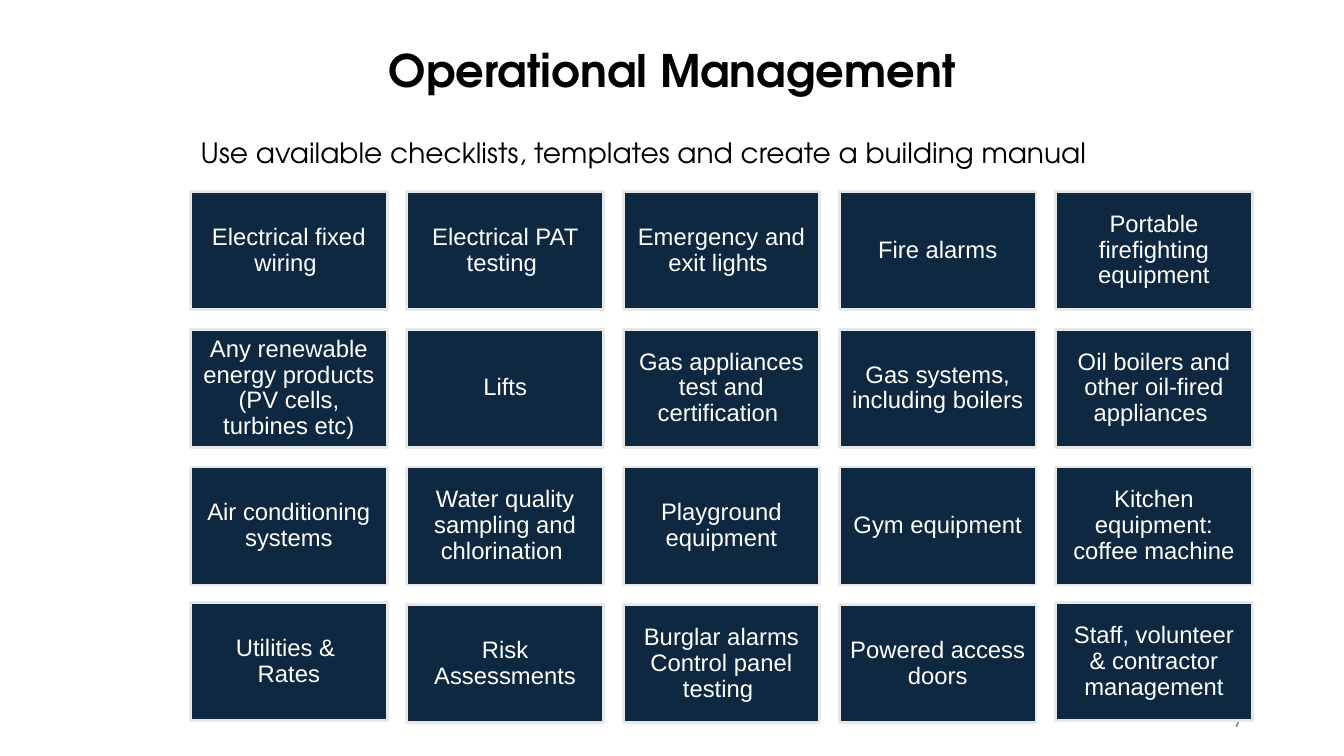
from pptx import Presentation
from pptx.dml.color import RGBColor
from pptx.enum.shapes import MSO_SHAPE
from pptx.enum.text import MSO_ANCHOR, MSO_AUTO_SIZE, PP_ALIGN
from pptx.oxml.ns import qn
from pptx.util import Inches, Pt

RECT = MSO_SHAPE.RECTANGLE
TOP, MIDDLE = MSO_ANCHOR.TOP, MSO_ANCHOR.MIDDLE
LEFT, CENTER, RIGHT = PP_ALIGN.LEFT, PP_ALIGN.CENTER, PP_ALIGN.RIGHT
GROW = MSO_AUTO_SIZE.SHAPE_TO_FIT_TEXT

COLORS = {"tile": "0E2841", "edge": "E8E8E8", "light": "FFFFFF",
          "dark": "000000", "grey": "797979"}
HEAD, BODY, NOTE = "TeX Gyre Adventor", "Arial", "Cabin"

# Trailing spaces count in the centring of a tile's last line
CHECKS = [
    ["Electrical fixed wiring ", "Electrical PAT testing ",
     "Emergency and exit lights ", "Fire alarms",
     "Portable firefighting equipment"],
    ["Any renewable energy products (PV cells, turbines etc)", "Lifts",
     "Gas appliances test and certification ",
     "Gas systems, including boilers",
     "Oil boilers and other oil-fired appliances "],
    ["Air conditioning systems", "Water quality sampling and chlorination ",
     "Playground equipment", "Gym equipment",
     "Kitchen equipment: coffee machine"],
    ["Utilities & \nRates", "Risk Assessments",
     "Burglar alarms Control panel testing ", "Powered access doors",
     "Staff, volunteer & contractor management"],
]


def color(name):
    return RGBColor.from_string(COLORS[name])


def place(shape, box):
    shape.left, shape.top, shape.width, shape.height = map(Inches, box)


def write(shape, text, font, size, tint, align, anchor, pad, bold=False,
          space=1.0, after=0):
    frame = shape.text_frame
    frame.text = text
    frame.word_wrap = True
    frame.vertical_anchor = anchor
    frame.margin_left = frame.margin_right = Inches(pad[0])
    frame.margin_top = frame.margin_bottom = Inches(pad[1])
    for para in frame.paragraphs:
        para.alignment = align
        para.line_spacing = space
        para.space_before, para.space_after = Pt(0), Pt(after)
        for run in para.runs:
            run.font.name, run.font.size = font, Pt(size)
            run.font.bold = bold
            run.font.color.rgb = color(tint)


def add_title(slide, box):
    title = slide.shapes.title
    place(title, box)
    write(title, "Operational Management", HEAD, 32, "dark", CENTER, TOP,
          (0, 0), bold=True, after=12)
    title.text_frame.auto_size = GROW


def add_lead(slide, box):
    lead = slide.placeholders[1]
    place(lead, box)
    write(lead, "Use available checklists, templates and create a building manual",
          HEAD, 20, "dark", LEFT, TOP, (0.1, 0.05))
    lead.text_frame.auto_size = GROW
    # No bullet and no indent
    props = lead.text_frame.paragraphs[0]._p.get_or_add_pPr()
    props.set("marL", "0")
    props.set("indent", "0")
    props.append(props.makeelement(qn("a:buNone"), {}))


def add_number(slide, box):
    number = slide.shapes.add_textbox(*map(Inches, box))
    write(number, "7", NOTE, 12, "grey", RIGHT, MIDDLE, (0.1, 0.05))


def add_tile(slide, box, text):
    tile = slide.shapes.add_shape(RECT, *map(Inches, box))
    tile.shadow.inherit = False
    tile.fill.solid()
    tile.fill.fore_color.rgb = color("tile")
    tile.line.color.rgb = color("edge")
    tile.line.width = Pt(2)
    write(tile, text, BODY, 17, "light", CENTER, MIDDLE, (0.07, 0.07),
          space=0.9)


def add_grid(slide, box, rows, wide=1.95, high=1.17):
    left, top, width, height = box
    last_row, last_col = len(rows) - 1, len(rows[0]) - 1
    step_x = (width - wide) / last_col
    step_y = (height - high) / last_row
    for i, row in enumerate(rows):
        for j, text in enumerate(row):
            # The two bottom corner tiles sit slightly higher
            lift = 0.02 if i == last_row and j in (0, last_col) else 0
            add_tile(slide, (left + j * step_x, top + i * step_y - lift,
                             wide, high), text)


def main():
    deck = Presentation()
    deck.slide_width, deck.slide_height = Inches(13.33), Inches(7.5)
    slide = deck.slides.add_slide(deck.slide_layouts[1])
    add_number(slide, (9.42, 6.95, 3, 0.4))
    add_title(slide, (2.36, 0.42, 8.62, 0.64))
    add_lead(slide, (1.89, 1.29, 10.27, 0.44))
    add_grid(slide, (1.89, 1.9, 10.53, 5.27), CHECKS)
    deck.save("out.pptx")


if __name__ == "__main__":
    main()
